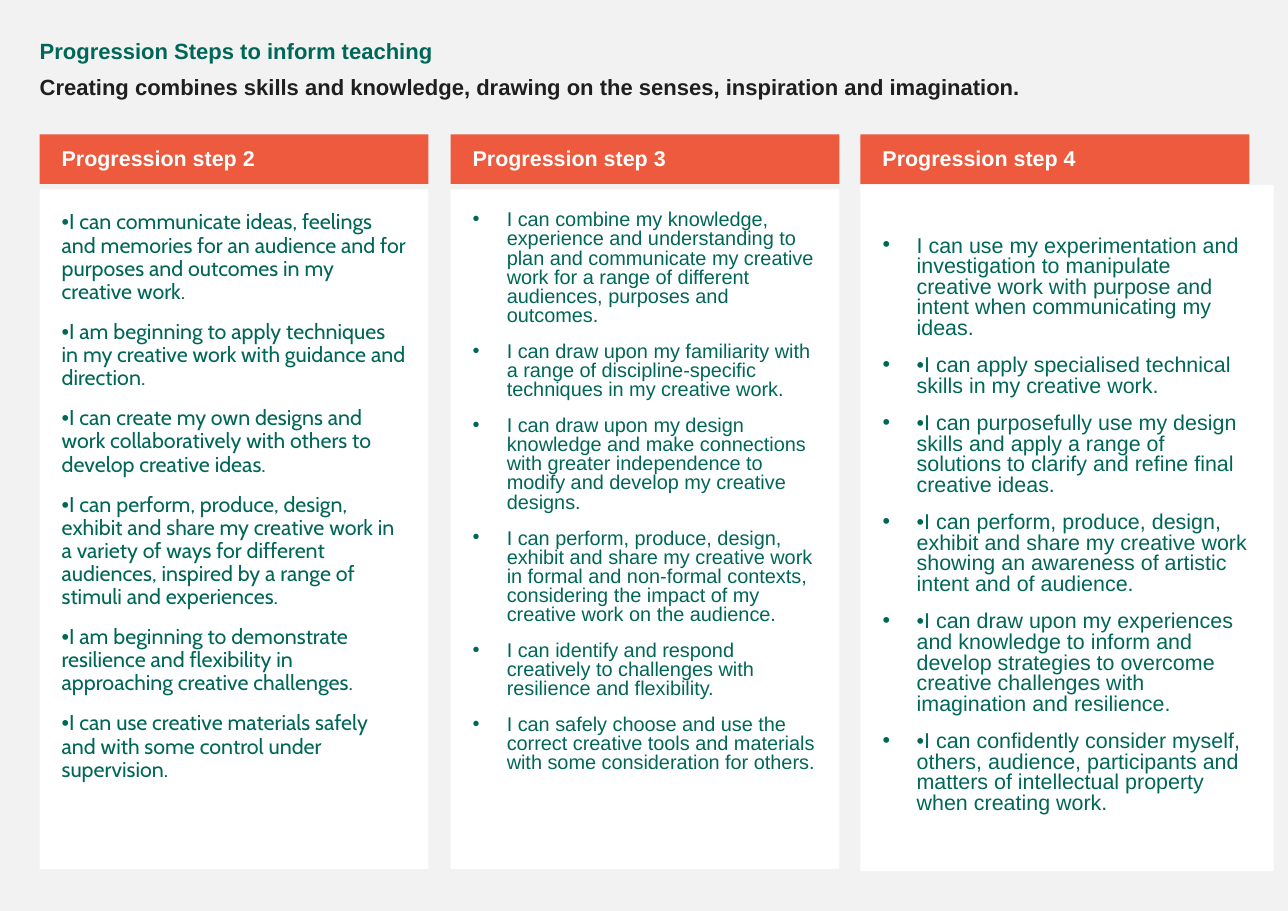
from dataclasses import dataclass

from lxml import etree
from pptx import Presentation
from pptx.dml.color import RGBColor
from pptx.enum import shapes, text
from pptx.oxml import ns
from pptx.util import Inches, Pt

GREEN, ORANGE, WHITE, DARK, GREY = "006758", "ED5A3E", "FFFFFF", "1F1F1F", "F2F2F2"
HEADER_TOP, HEADER_WIDTH, HEADER_HEIGHT = 1.22, 3.53, 0.45
HANGING = 0.31


@dataclass
class Step:
    heading: str
    left: float
    top: float
    width: float
    height: float
    inset_top: float
    size: float
    spacing: float
    bulleted: bool
    statements: list[str]


STEPS = [
    Step("Progression step 2", 0.36, 1.72, 3.53, 6.17, 0.2, 14, 0.9, False, [
        "I can communicate ideas, feelings and memories for an audience and for purposes and outcomes in my creative work.",
        "I am beginning to apply techniques in my creative work with guidance and direction.",
        "I can create my own designs and work collaboratively with others to develop creative ideas.",
        "I can perform, produce, design, exhibit and share my creative work in a variety of ways for different audiences, inspired by a range of stimuli and experiences.",
        "I am beginning to demonstrate resilience and flexibility in approaching creative challenges.",
        "I can use creative materials safely and with some control under supervision.",
    ]),
    Step("Progression step 3", 4.09, 1.72, 3.53, 6.17, 0.2, 13, 0.8, True, [
        "I can combine my knowledge, experience and understanding to plan and communicate my creative work for a range of different audiences, purposes and outcomes.",
        "I can draw upon my familiarity with a range of discipline-specific techniques in my creative work.",
        "I can draw upon my design knowledge and make connections with greater independence to modify and develop my creative designs.",
        "I can perform, produce, design, exhibit and share my creative work in formal and non-formal contexts, considering the impact of my creative work on the audience.",
        "I can identify and respond creatively to challenges with resilience and flexibility.",
        "I can safely choose and use the correct creative tools and materials with some consideration for others.",
    ]),
    Step("Progression step 4", 7.81, 1.68, 3.75, 6.23, 0.47, 14, 0.8, True, [
        "I can use my experimentation and investigation to manipulate creative work with purpose and intent when communicating my ideas.",
        "•I can apply specialised technical skills in my creative work.",
        "•I can purposefully use my design skills and apply a range of solutions to clarify and refine final creative ideas.",
        "•I can perform, produce, design, exhibit and share my creative work showing an awareness of artistic intent and of audience.",
        "•I can draw upon my experiences and knowledge to inform and develop strategies to overcome creative challenges with imagination and resilience.",
        "•I can confidently consider myself, others, audience, participants and matters of intellectual property when creating work.",
    ]),
]


def set_color(target, color: str) -> None:
    """Colour a fill or a font from a hex string."""
    if hasattr(target, "solid"):
        target.solid()
        target.fore_color.rgb = RGBColor.from_string(color)
    else:
        target.color.rgb = RGBColor.from_string(color)


def format_paragraph(p, size: float, color: str, spacing: float, bold: bool = False) -> None:
    p.alignment = text.PP_ALIGN.LEFT
    p.line_spacing = spacing
    p.space_before = Pt(11)
    p.font.name, p.font.size, p.font.bold = "Arial", Pt(size), bold
    set_color(p.font, color)


def add_bullet(p) -> None:
    """Give a paragraph a hanging bullet, placed before its default font."""
    props = p._p.get_or_add_pPr()
    props.set("marL", str(Inches(HANGING)))
    props.set("indent", str(-Inches(HANGING)))
    font = etree.Element(ns.qn("a:buFont"), typeface="Arial")
    char = etree.Element(ns.qn("a:buChar"), char="•")
    default = props.find(ns.qn("a:defRPr"))
    default.addprevious(font)
    default.addprevious(char)


def add_panel(s, left: float, top: float, width: float, height: float, color: str,
              insets: tuple[float, float, float, float], anchor):
    """Draw a filled rectangle and return its text frame."""
    sp = s.shapes.add_shape(shapes.MSO_SHAPE.RECTANGLE, Inches(left), Inches(top),
                            Inches(width), Inches(height))
    sp.shadow.inherit = False
    set_color(sp.fill, color)
    sp.line.fill.background()
    tf = sp.text_frame
    tf.word_wrap = True
    tf.vertical_anchor = anchor
    tf.margin_left, tf.margin_top, tf.margin_right, tf.margin_bottom = map(Inches, insets)
    return tf


def add_step(s, step: Step) -> None:
    # Statements
    tf = add_panel(s, step.left, step.top, step.width, step.height, WHITE,
                   (0.2, step.inset_top, 0.2, 0.2), text.MSO_ANCHOR.TOP)
    for i, statement in enumerate(step.statements):
        p = tf.add_paragraph() if i else tf.paragraphs[0]
        format_paragraph(p, step.size, GREEN, step.spacing)
        if step.bulleted:
            add_bullet(p)
        else:
            p.add_run().text = "•"
        r = p.add_run()
        r.text = statement
        if not step.bulleted:
            r.font.name = "Cabin"

    # Heading bar
    tf = add_panel(s, step.left, HEADER_TOP, HEADER_WIDTH, HEADER_HEIGHT, ORANGE,
                   (0.2, 0.05, 0.1, 0.05), text.MSO_ANCHOR.MIDDLE)
    p = tf.paragraphs[0]
    p.text = step.heading
    format_paragraph(p, 14, WHITE, 0.9, bold=True)


def add_title(s) -> None:
    sp = s.shapes.title
    sp.left, sp.top, sp.width, sp.height = map(Inches, (0.26, 0.36, 11.08, 0.65))
    tf = sp.text_frame
    tf.auto_size = text.MSO_AUTO_SIZE.NONE
    tf.vertical_anchor = text.MSO_ANCHOR.TOP
    tf.text = ("Progression Steps to inform teaching\n"
               "Creating combines skills and knowledge, drawing on the senses, inspiration and imagination.")
    for p, color in zip(tf.paragraphs, (GREEN, DARK)):
        format_paragraph(p, 14.4, color, 0.7, bold=True)


def main() -> None:
    prs = Presentation()
    prs.slide_width, prs.slide_height = Inches(11.69), Inches(8.27)
    s = prs.slides.add_slide(prs.slide_layouts[5])
    set_color(s.background.fill, GREY)
    add_title(s)
    for step in STEPS:
        add_step(s, step)
    prs.save("out.pptx")


if __name__ == "__main__":
    main()
